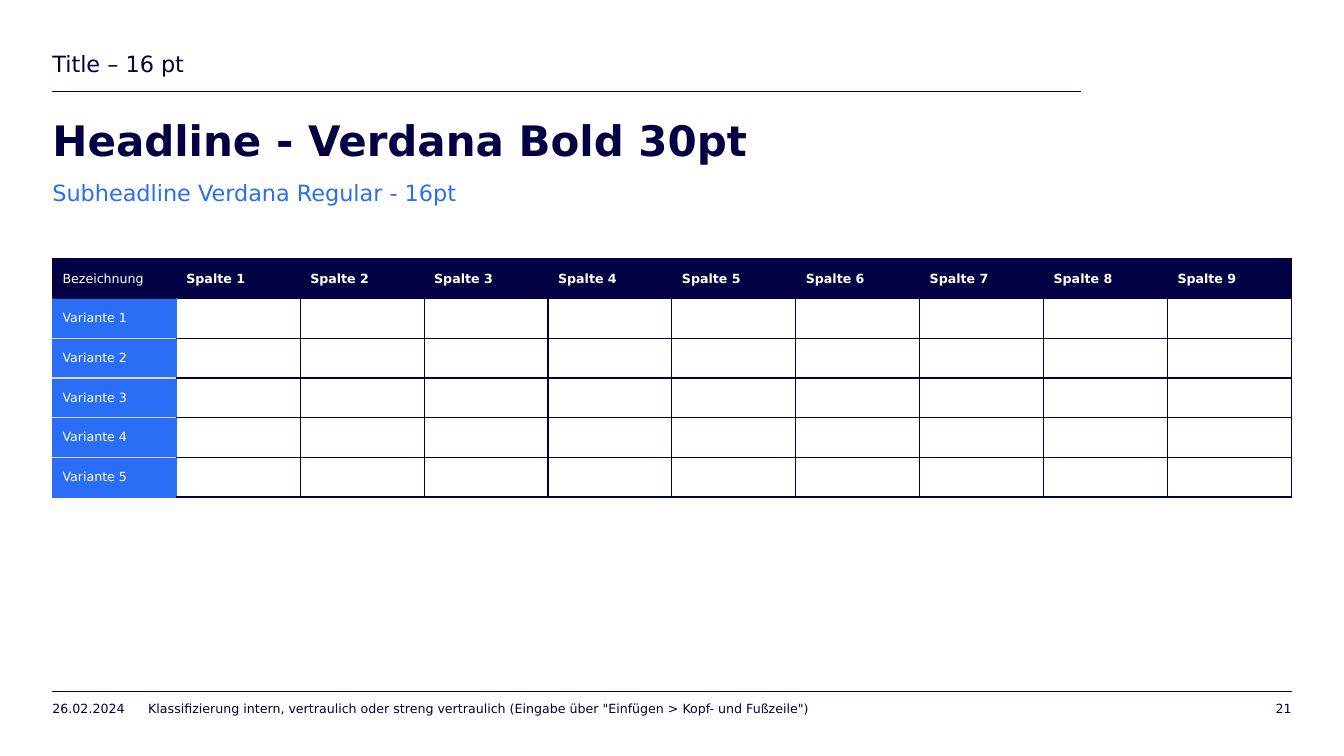
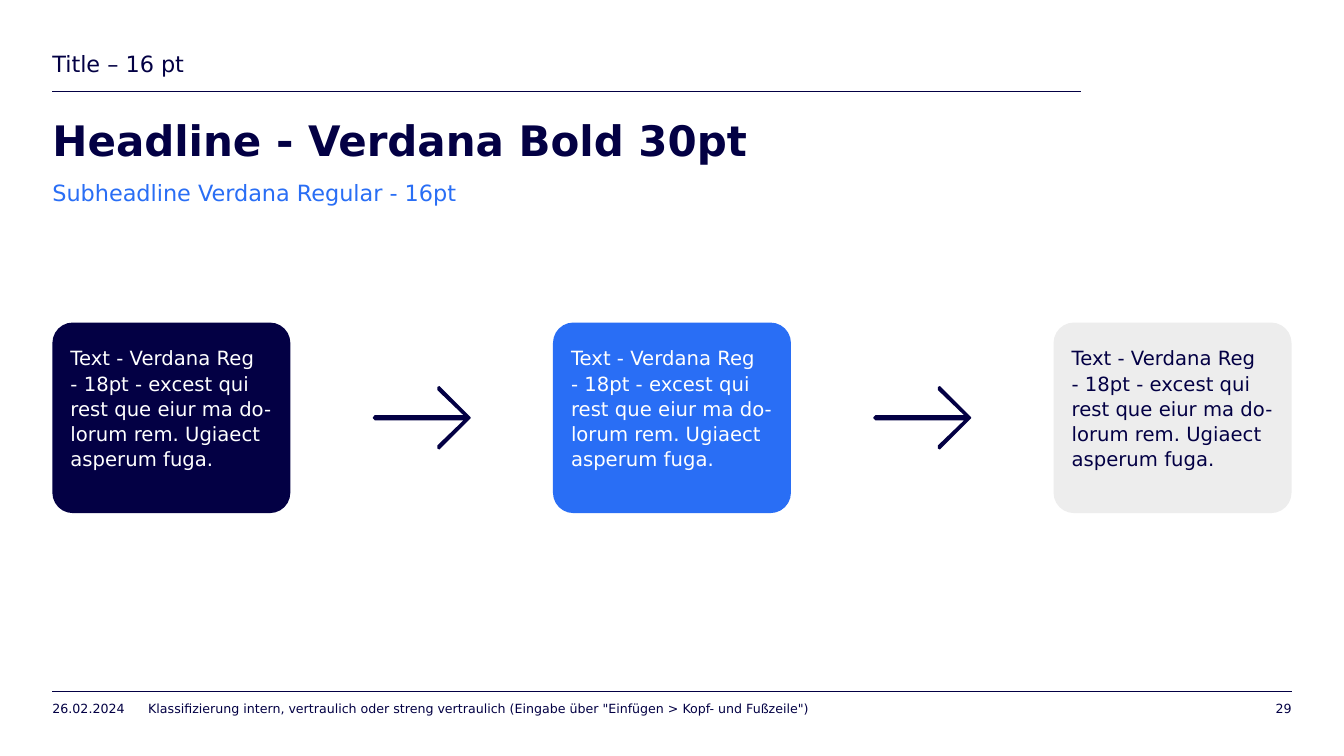
"""Build a table slide and a process slide with a shared title block and footer."""
from lxml import etree
from pptx import Presentation, util as u
from pptx.dml.color import RGBColor
from pptx.enum import shapes, text
from pptx.oxml.ns import qn

COLORS = {"navy": "030044", "blue": "296EF5", "white": "FFFFFF",
          "silver": "DADADA", "mist": "EDEDED"}
FONT = "DejaVu Sans"
WIDTH, HEIGHT = 13.33, 7.5
MARGIN = 0.52
SPAN = WIDTH - 2 * MARGIN
RIGHT = MARGIN + SPAN
COLUMNS, ROWS = 10, 6
CARD_WIDTH, CARD_HEIGHT, CARD_TOP = 2.36, 1.89, 3.2
CARD_STYLES = [("navy", "white"), ("blue", "white"), ("mist", "navy")]
CARD_TEXT = ("Text - Verdana Reg\v- 18pt - excest qui rest que eiur ma "
             "do-lorum rem. Ugiaect asperum fuga.")
FOOTER = ("Klassifizierung intern, vertraulich oder streng vertraulich "
          "(Eingabe über \"Einfügen > Kopf- und Fußzeile\")")
ARROW_WIDTH, ARROW_HEIGHT = 0.97, 0.63
ARROW_UPPER_EDGE = [(0, 0.31), (0.02, 0.29), (0.9, 0.29), (0.64, 0.04), (0.64, 0.01),
                    (0.66, 0), (0.67, 0.01), (0.96, 0.3), (0.97, 0.31)]


def color(name):
    return RGBColor.from_string(COLORS[name])


def paint(shape, fill):
    shape.fill.solid()
    shape.fill.fore_color.rgb = color(fill)
    shape.line.fill.background()
    shape.shadow.inherit = False


def write(frame, content, size, tint="navy", bold=False, align="LEFT",
          anchor="TOP", insets=(0, 0, 0, 0), spacing=None):
    frame.word_wrap = True
    frame.auto_size = text.MSO_AUTO_SIZE.NONE
    frame.vertical_anchor = text.MSO_ANCHOR[anchor]
    (frame.margin_left, frame.margin_top,
     frame.margin_right, frame.margin_bottom) = map(u.Inches, insets)
    frame.text = content
    para = frame.paragraphs[0]
    para.alignment = text.PP_ALIGN[align]
    para.line_spacing = spacing
    style_font(para.font, size, tint, bold)


def style_font(font, size, tint, bold):
    font.name, font.size, font.bold = FONT, u.Pt(size), bold
    font.color.rgb = color(tint)


def add_text(page, area, content, size, **style):
    box = page.shapes.add_textbox(*map(u.Inches, area))
    write(box.text_frame, content, size, **style)


def add_rule(page, top, end):
    rule = page.shapes.add_connector(shapes.MSO_CONNECTOR.STRAIGHT,
                                     *map(u.Inches, (MARGIN, top, end, top)))
    rule.line.color.rgb = color("navy")
    rule.line.width = u.Pt(0.5)
    etree.SubElement(rule._element.spPr, qn("a:effectLst"))


def add_page(deck, number):
    page = deck.slides.add_slide(deck.slide_layouts[5])
    add_rule(page, 0.91, 10.72)
    add_rule(page, 6.86, RIGHT)
    title = page.shapes.title
    title.left, title.top, title.width, title.height = map(
        u.Inches, (MARGIN, 1.19, SPAN, 0.45))
    write(title.text_frame, "Headline - Verdana Bold 30pt", 30, bold=True, spacing=0.9)
    add_text(page, (MARGIN, 0.49, 10.2, 0.27), "Title – 16 pt", 16, anchor="BOTTOM")
    add_text(page, (MARGIN, 1.78, SPAN, 0.27), "Subheadline Verdana Regular - 16pt",
             16, tint="blue")
    for left, width, content, align in [(MARGIN, 0.79, "26.02.2024", "LEFT"),
                                        (1.47, 9.45, FOOTER, "LEFT"),
                                        (RIGHT - 0.39, 0.39, number, "RIGHT")]:
        add_text(page, (left, 6.95, width, 0.15), content, 9, align=align, anchor="MIDDLE")
    return page


def set_borders(cell, tints):
    properties = cell._tc.get_or_add_tcPr()
    for side, tint in zip("LRTB", tints):
        line = etree.SubElement(properties, qn(f"a:ln{side}"), w=str(u.Pt(1)))
        fill = etree.SubElement(line, qn("a:solidFill"))
        etree.SubElement(fill, qn("a:srgbClr"), val=COLORS[tint])


def cell_look(row, column):
    """Return the text, fill and left, right, top and bottom border colours of a cell."""
    borders = ["navy"] * 4
    if row == 0:
        return f"Spalte {column}" if column else "Bezeichnung", "navy", borders
    if column == 0:
        top = "navy" if row == 1 else "silver"
        bottom = "blue" if row == ROWS - 1 else "silver"
        return f"Variante {row}", "blue", ["blue", "blue", top, bottom]
    if column == 1:
        borders[0] = "blue"
    return "", "white", borders


def add_variant_table(page):
    height = 2.36
    frame = page.shapes.add_table(ROWS, COLUMNS,
                                  *map(u.Inches, (MARGIN, 2.57, SPAN, height)))
    table = frame.table
    table.first_row = table.horz_banding = False
    for column in table.columns:
        column.width = u.Inches(SPAN / COLUMNS)
    for row in table.rows:
        row.height = u.Inches(height / ROWS)
    for index, cell in enumerate(table.iter_cells()):
        row, column = divmod(index, COLUMNS)
        content, fill, borders = cell_look(row, column)
        set_borders(cell, borders)
        cell.fill.solid()
        cell.fill.fore_color.rgb = color(fill)
        cell.margin_top = cell.margin_bottom = 0
        cell.vertical_anchor = text.MSO_ANCHOR.MIDDLE
        cell.text = content
        style_font(cell.text_frame.paragraphs[0].font, 9, "white",
                   row == 0 and column > 0)


def add_card(page, left, fill, tint):
    card = page.shapes.add_shape(shapes.MSO_SHAPE.ROUNDED_RECTANGLE,
                                 *map(u.Inches, (left, CARD_TOP, CARD_WIDTH, CARD_HEIGHT)))
    card.adjustments[0] = 0.107
    paint(card, fill)
    write(card.text_frame, CARD_TEXT, 14, tint=tint,
          insets=(0.12, 0.16, 0.1, 0.05), spacing=1.07)


def add_arrow(page, left, top):
    lower_edge = [(x, ARROW_HEIGHT - y) for x, y in reversed(ARROW_UPPER_EDGE)]
    outline = [(u.Inches(left + x), u.Inches(top + y))
               for x, y in ARROW_UPPER_EDGE + lower_edge]
    builder = page.shapes.build_freeform(*outline[0])
    builder.add_line_segments(outline[1:], close=True)
    paint(builder.convert_to_shape(), "navy")


def add_process(page):
    step = (SPAN - CARD_WIDTH) / (len(CARD_STYLES) - 1)
    lefts = [MARGIN + index * step for index in range(len(CARD_STYLES))]
    for left, (fill, tint) in zip(lefts, CARD_STYLES):
        add_card(page, left, fill, tint)
    for left in lefts[:-1]:
        add_arrow(page, left + (step + CARD_WIDTH - ARROW_WIDTH) / 2,
                  CARD_TOP + (CARD_HEIGHT - ARROW_HEIGHT) / 2)


def main():
    deck = Presentation()
    deck.slide_width, deck.slide_height = u.Inches(WIDTH), u.Inches(HEIGHT)
    add_variant_table(add_page(deck, "21"))
    add_process(add_page(deck, "29"))
    deck.save("out.pptx")


if __name__ == "__main__":
    main()
